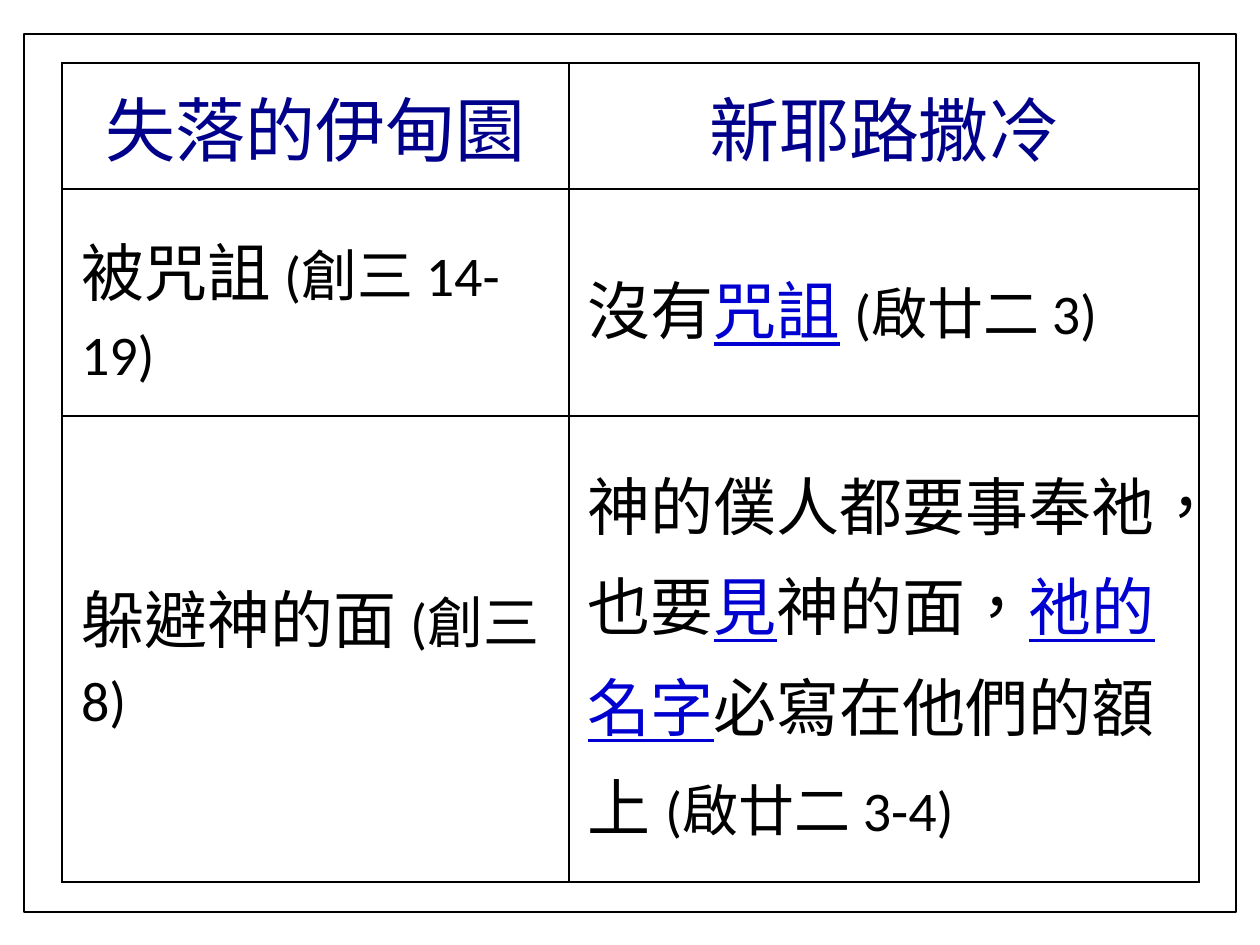
from lxml import etree
from pptx import Presentation
from pptx.dml.color import RGBColor
from pptx.enum.lang import MSO_LANGUAGE_ID
from pptx.enum.shapes import MSO_SHAPE
from pptx.enum.text import MSO_ANCHOR, PP_ALIGN
from pptx.oxml.ns import qn
from pptx.util import Pt

RECT = MSO_SHAPE.RECTANGLE
MIDDLE = MSO_ANCHOR.MIDDLE
CENTER, LEFT = PP_ALIGN.CENTER, PP_ALIGN.LEFT
CHINESE = MSO_LANGUAGE_ID.TRADITIONAL_CHINESE
SCALE = 914400 / 126

THEME = {
    "paper": "FFFFFF", "line": "000000", "line_pt": 1,
    # run styles: font, size, colour, underline
    "head": ("Roboto", 40, "00008A", False),
    "text": ("Calibri", 36, "000000", False),
    "key": ("Calibri", 36, "0000D0", True),
    "gap": ("Calibri", 36, "0000D0", False),
    "ref": ("Calibri", 32, "000000", False),
}


def px(n):
    return round(n * SCALE)


def add_borders(cell):
    tcPr = cell._tc.get_or_add_tcPr()
    for side in ("lnL", "lnR", "lnT", "lnB"):
        ln = etree.SubElement(tcPr, qn("a:" + side), w=str(Pt(THEME["line_pt"])))
        fill = etree.SubElement(ln, qn("a:solidFill"))
        etree.SubElement(fill, qn("a:srgbClr"), val=THEME["line"])


prs = Presentation()
prs.slide_width, prs.slide_height = px(1260), px(945)
s = prs.slides.add_slide(prs.slide_layouts[6])

# Outer frame
sp = s.shapes.add_shape(RECT, px(24), px(34), px(1212), px(878))
sp.shadow.inherit = False
sp.fill.solid()
sp.fill.fore_color.rgb = RGBColor.from_string(THEME["paper"])
sp.line.color.rgb = RGBColor.from_string(THEME["line"])
sp.line.width = Pt(THEME["line_pt"])

# Comparison table: each cell is a list of (text, style) runs
rows = [
    [[("失落的伊甸園", "head")],
     [("新耶路撒冷", "head")]],
    [[("被咒詛 ", "text"), ("(創三 14-19)", "ref")],
     [("沒有", "text"), ("咒詛", "key"), (" ", "gap"), ("(啟廿二 3)", "ref")]],
    [[("躲避神的面 ", "text"), ("(創三 8)", "ref")],
     [("神的僕人都要事奉祂，也要", "text"), ("見", "key"), ("神的面，", "text"),
      ("祂的名字", "key"), ("必寫在他們的額上 ", "text"), ("(啟廿二 3-4)", "ref")]],
]
col_widths, row_heights = [507, 630], [126, 227, 466]
table = s.shapes.add_table(len(rows), len(col_widths), px(62), px(63),
                           px(sum(col_widths)), px(sum(row_heights))).table
table.first_row = table.horz_banding = False
for col, width in zip(table.columns, col_widths):
    col.width = px(width)

for i, (row, height) in enumerate(zip(rows, row_heights)):
    table.rows[i].height = px(height)
    is_head = i == 0
    for j, runs in enumerate(row):
        cell = table.cell(i, j)
        add_borders(cell)
        cell.fill.background()
        cell.vertical_anchor = MIDDLE
        cell.margin_left = cell.margin_right = px(9 if is_head else 19)
        cell.margin_top = cell.margin_bottom = px(0 if is_head else 19)
        p = cell.text_frame.paragraphs[0]
        p.alignment = CENTER if is_head else LEFT
        p.space_before = p.space_after = Pt(6)
        p.line_spacing = 1.0 if is_head else 1.1
        for text, style in runs:
            r = p.add_run()
            r.text = text
            name, size, color, underline = THEME[style]
            r.font.name, r.font.size = name, Pt(size)
            r.font.color.rgb = RGBColor.from_string(color)
            r.font.underline = underline
            r.font.language_id = CHINESE

prs.save("out.pptx")
